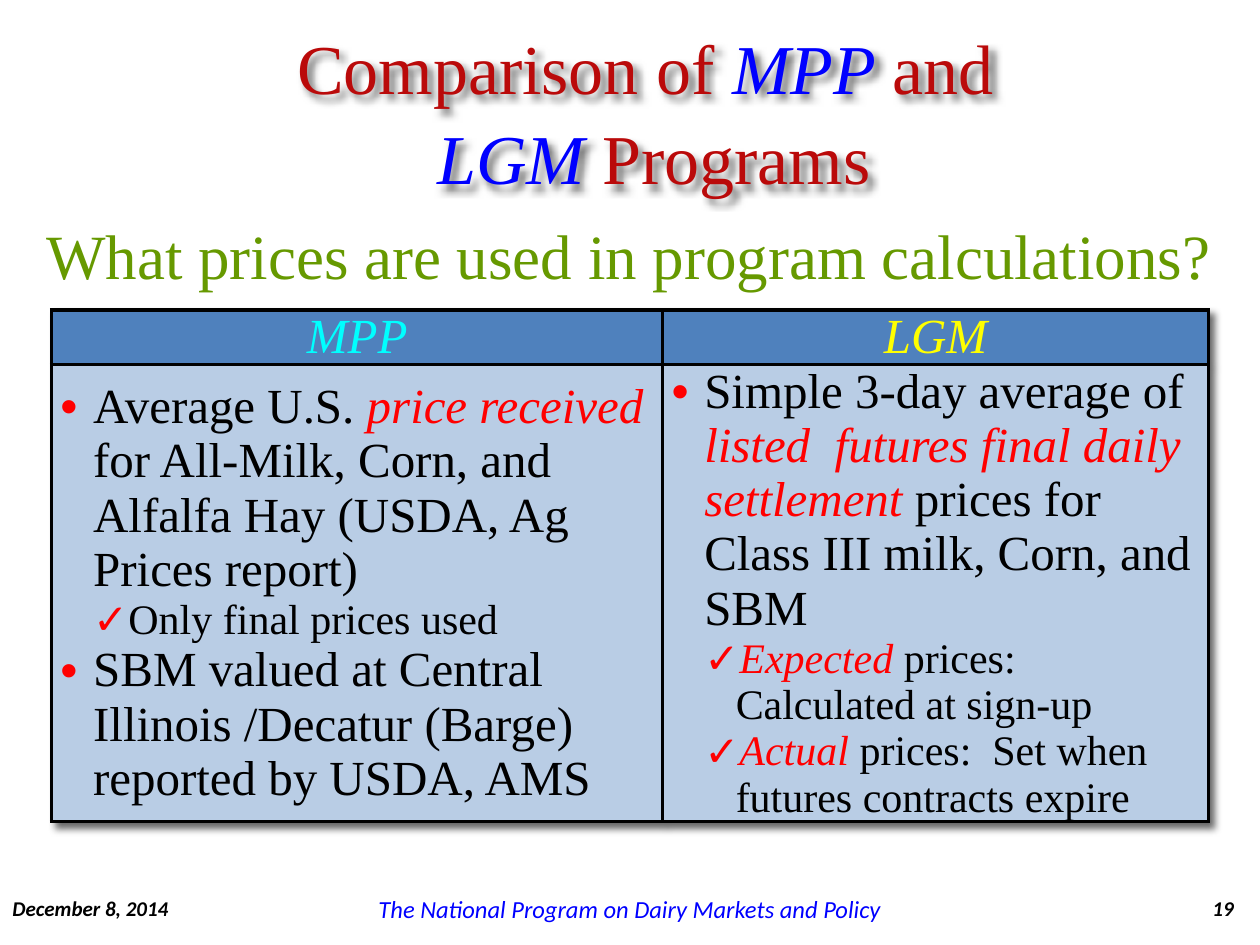
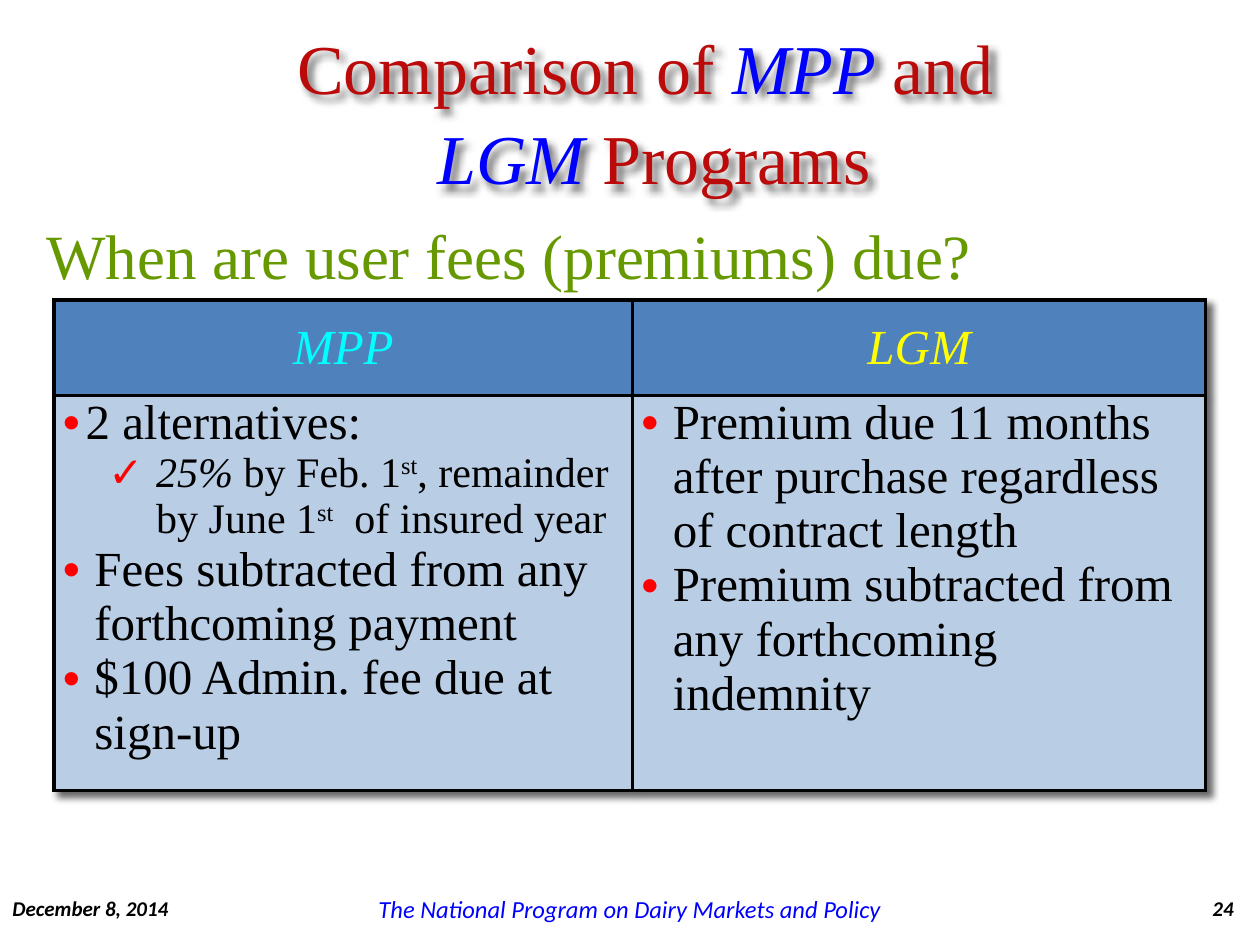
from dataclasses import dataclass
from lxml.etree import SubElement
from pptx import Presentation
from pptx.dml.color import RGBColor
from pptx.enum.text import MSO_ANCHOR, PP_ALIGN
from pptx.oxml import parse_xml
from pptx.oxml.ns import nsdecls, qn
from pptx.util import Inches, Pt


@dataclass(frozen=True)
class Theme:
    serif: str = "Times New Roman"
    sans: str = "Calibri"
    black: str = "000000"
    red: str = "FF0000"
    blue: str = "0000FF"
    brick: str = "BA0A0A"
    green: str = "669900"
    aqua: str = "00FFFF"
    gold: str = "FFFF00"
    head: str = "4F81BD"
    body: str = "B9CDE5"
    title: int = 40
    ask: int = 36
    point: int = 28
    check: int = 24
    foot: int = 14
    small: int = 12
    rule: float = 2.25


T = Theme()
MID, TOP = MSO_ANCHOR.MIDDLE, MSO_ANCHOR.TOP
LEFT, MIDST, RIGHT = PP_ALIGN.LEFT, PP_ALIGN.CENTER, PP_ALIGN.RIGHT
PLAIN = {"color": T.black}
HOT = {"color": T.red, "slant": True}
SLANT = {"color": T.black, "slant": True}
RAISED = {"color": T.black, "lift": True}


def add_run(para, text, size, color, face=T.serif, slant=False, bold=False, lift=False):
    run = para.add_run()
    run.text = text
    font = run.font
    font.name, font.size = face, Pt(size)
    font.italic, font.bold = slant, bold
    font.color.rgb = RGBColor.from_string(color)
    if lift:
        run._r.get_or_add_rPr().set("baseline", "30000")


def shadow(blur, gap):
    return parse_xml(
        f'<a:effectLst {nsdecls("a")}><a:outerShdw blurRad="{Pt(blur)}" dist="{Pt(gap)}" '
        'dir="2700000" algn="tl" rotWithShape="0"><a:srgbClr val="000000">'
        '<a:alpha val="60000"/></a:srgbClr></a:outerShdw></a:effectLst>')


def add_text(slide, box, align=LEFT, anchor=MID, wrap=True):
    shape = slide.shapes.add_textbox(*map(Inches, box))
    frame = shape.text_frame
    frame.word_wrap, frame.vertical_anchor = wrap, anchor
    frame.paragraphs[0].alignment = align
    return shape, frame.paragraphs[0]


def add_title(slide, box):
    shape, para = add_text(slide, box, MIDST)
    shape._element.spPr.append(shadow(4, 4))
    add_run(para, "Comparison of ", T.title, T.brick)
    add_run(para, "MPP ", T.title, T.blue, slant=True)
    add_run(para, "and", T.title, T.brick)
    para = shape.text_frame.add_paragraph()
    para.alignment, para.space_before = MIDST, Pt(4)
    add_run(para, " LGM ", T.title, T.blue, slant=True)
    add_run(para, "Programs", T.title, T.brick)


def add_ask(slide, box, text):
    para = add_text(slide, box, anchor=TOP, wrap=False)[1]
    add_run(para, text, T.ask, T.green)


def add_foot(slide, box, page):
    left, top, width, high = box
    parts = (
        (0, 1.61, LEFT, "December 8, 2014", T.small, T.black, True),
        (2.88, 4.24, MIDST, "The National Program on Dairy Markets and Policy", T.foot, T.blue, False),
        (width - 0.89, 0.78, RIGHT, str(page), T.small, T.black, True),
    )
    for shift, span, align, text, size, color, bold in parts:
        para = add_text(slide, (left + shift, top, span, high), align)[1]
        add_run(para, text, size, color, T.sans, True, bold)


def add_mark(para, mark, margin, hang):
    props = para._p.get_or_add_pPr()
    props.set("marL", str(Inches(margin)))
    props.set("indent", str(-Inches(hang)))
    tint = SubElement(props, qn("a:buClr"))
    SubElement(tint, qn("a:srgbClr"), val=T.red)
    SubElement(props, qn("a:buFont"), typeface="Arial")
    SubElement(props, qn("a:buChar"), char=mark)


def style_cell(cell, fill, anchor):
    cell.margin_left = cell.margin_right = Inches(0.07)
    cell.margin_top = cell.margin_bottom = 0
    cell.vertical_anchor = anchor
    props = cell._tc.get_or_add_tcPr()
    for side in "LRTB":
        props.append(parse_xml(
            f'<a:ln{side} {nsdecls("a")} w="{Pt(T.rule)}"><a:solidFill>'
            f'<a:srgbClr val="{T.black}"/></a:solidFill></a:ln{side}>'))
    cell.fill.solid()
    cell.fill.fore_color.rgb = RGBColor.from_string(fill)


def fill_cell(cell, items):
    frame = cell.text_frame
    for num, (mark, margin, hang, runs) in enumerate(items):
        para = frame.add_paragraph() if num else frame.paragraphs[0]
        add_mark(para, mark, margin, hang)
        size = T.point if mark == "•" else T.check
        for text, look in runs:
            add_run(para, text, size, **look)


def add_grid(slide, spot, cols, rows, anchor, lists):
    box = (*spot, sum(cols), sum(rows))
    grid = slide.shapes.add_table(2, 2, *map(Inches, box)).table
    grid.first_row = grid.horz_banding = False
    grid._tbl.tblPr.insert(0, shadow(4, 4))
    for col, width in zip(grid.columns, cols):
        col.width = Inches(width)
    for row, high in zip(grid.rows, rows):
        row.height = Inches(high)
    heads = (("MPP", T.aqua), ("LGM", T.gold))
    for col, ((name, color), items) in enumerate(zip(heads, lists)):
        head, body = grid.cell(0, col), grid.cell(1, col)
        style_cell(head, T.head, anchor[0])
        style_cell(body, T.body, anchor[1])
        para = head.text_frame.paragraphs[0]
        para.alignment = MIDST
        add_run(para, name, T.point, color, slant=True)
        fill_cell(body, items)


def point(*runs, margin=0.25):
    return "•", margin, margin, runs


def check(*runs, margin=0.51, hang=0.25):
    return "✓", margin, hang, runs


def add_page(deck, page, ask, span, **grid):
    slide = deck.slides.add_slide(deck.slide_layouts[6])
    add_grid(slide, **grid)
    add_ask(slide, (0.27, 1.67, span, 0.71), ask)
    add_title(slide, (1.07, 0.26, 8.1, 1.25))
    add_foot(slide, (0, 7.09, 10, 0.24), page)


def main():
    deck = Presentation()
    deck.slide_width, deck.slide_height = Inches(10), Inches(7.5)
    add_page(
        deck, 19, "What prices are used in program calculations?", 9.54,
        spot=(0.41, 2.46), cols=(4.85, 4.33), rows=(0.43, 3.63), anchor=(TOP, MID),
        lists=(
            (point(("Average U.S. ", PLAIN), ("price received ", HOT),
                   ("for All-Milk, Corn, and Alfalfa Hay (USDA, Ag Prices report)", PLAIN),
                   margin=0.26),
             check(("Only final prices used", PLAIN)),
             point(("SBM valued at Central Illinois /Decatur (Barge) reported by USDA, AMS", PLAIN),
                   margin=0.26)),
            (point(("Simple 3-day average of ", PLAIN),
                   ("listed  futures final daily settlement ", HOT),
                   ("prices for Class III milk, Corn, and SBM", PLAIN), margin=0.26),
             check(("Expected", HOT), (" prices: Calculated at sign-up", PLAIN)),
             check(("Actual", HOT), (" prices:  Set when futures contracts expire", PLAIN))),
        ))
    add_page(
        deck, 24, "When are user fees (premiums) due?", 7.62,
        spot=(0.43, 2.38), cols=(4.59, 4.55), rows=(0.76, 3.12), anchor=(MID, TOP),
        lists=(
            (point(("2 alternatives:", PLAIN), margin=0.18),
             check(("25% ", SLANT), ("by Feb. 1", PLAIN), ("st", RAISED),
                   (", remainder by June 1", PLAIN), ("st", RAISED),
                   ("  of insured year", PLAIN), margin=0.74, hang=0.38),
             point(("Fees subtracted from any forthcoming payment", PLAIN)),
             point(("$100 Admin. fee due at sign-up", PLAIN))),
            (point(("Premium due 11 months after purchase regardless of contract length", PLAIN)),
             point(("Premium subtracted from any forthcoming indemnity", PLAIN))),
        ))
    deck.save("out.pptx")


if __name__ == "__main__":
    main()
